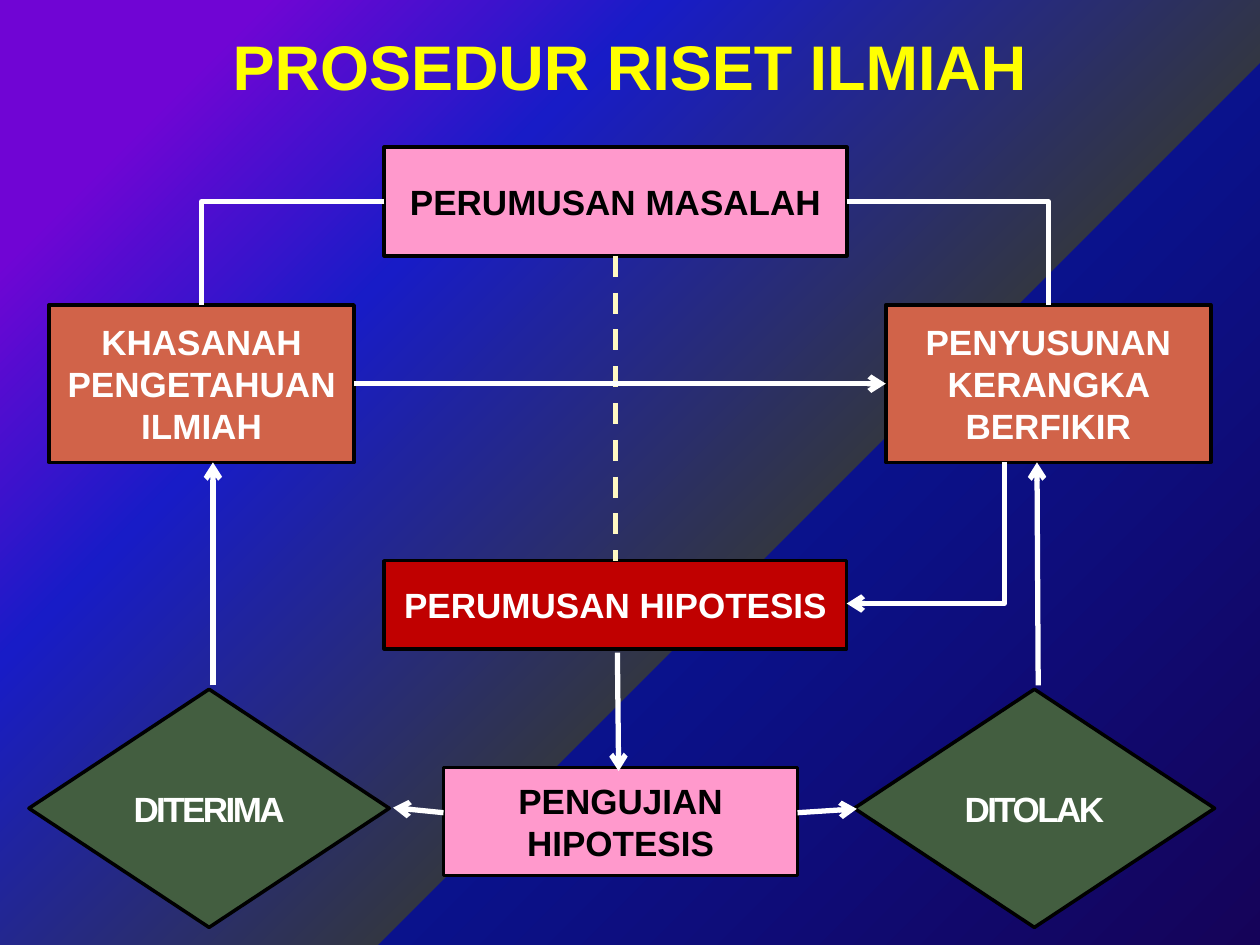
from dataclasses import dataclass

from pptx import Presentation
from pptx.dml.color import RGBColor
from pptx.enum.dml import MSO_LINE
from pptx.enum.shapes import MSO_CONNECTOR, MSO_SHAPE
from pptx.enum.text import MSO_ANCHOR, PP_ALIGN
from pptx.oxml import parse_xml
from pptx.oxml.ns import nsdecls, qn
from pptx.util import Inches, Pt


@dataclass(frozen=True)
class Theme:
    font: str = "Arial"
    title_size: int = 36
    body_size: int = 20
    title: str = "FFFF00"
    pink: str = "FF99CC"
    red: str = "C00000"
    orange: str = "D16349"
    green: str = "435E40"
    black: str = "000000"
    white: str = "FFFFFF"
    cream: str = "FFF8C2"
    outline: float = 2
    arrow: float = 3
    background: tuple = ((0, "150359"), (40, "0A128C"), (40, "323643"),
                         (70, "181CC7"), (88, "7005D4"))


THEME = Theme()
TOP, LEFT, BOTTOM, RIGHT = range(4)


def rgb(color):
    return RGBColor.from_string(color)


def set_background(s):
    stops = "".join(f'<a:gs pos="{pos * 1000}"><a:srgbClr val="{color}"/></a:gs>'
                    for pos, color in THEME.background)
    bg = parse_xml(
        f'<p:bg {nsdecls("p", "a")}><p:bgPr><a:gradFill rotWithShape="1">'
        f'<a:gsLst>{stops}</a:gsLst><a:path path="circle">'
        '<a:fillToRect l="100000" t="100000"/></a:path></a:gradFill>'
        '<a:effectLst/></p:bgPr></p:bg>')
    s.element.cSld.insert(0, bg)


def write(tf, text, size, color, spacing=0):
    tf.vertical_anchor = MSO_ANCHOR.MIDDLE
    p = tf.paragraphs[0]
    p.alignment = PP_ALIGN.CENTER
    r = p.add_run()
    r.text = text
    r.font.name = THEME.font
    r.font.size = Pt(size)
    r.font.bold = True
    r.font.color.rgb = rgb(color)
    if spacing:
        r.font._element.set("spc", str(int(spacing * 100)))


def add_title(s, box, text):
    title = s.shapes.title
    title.left, title.top, title.width, title.height = map(Inches, box)
    title.text_frame.word_wrap = True
    write(title.text_frame, text, THEME.title_size, THEME.title)


def add_node(s, box, text, fill, color=THEME.white, kind=MSO_SHAPE.RECTANGLE,
             outline=THEME.outline):
    sp = s.shapes.add_shape(kind, *map(Inches, box))
    sp.shadow.inherit = False
    sp.fill.solid()
    sp.fill.fore_color.rgb = rgb(fill)
    sp.line.color.rgb = rgb(THEME.black)
    sp.line.width = Pt(outline)
    is_decision = kind == MSO_SHAPE.DIAMOND
    sp.text_frame.word_wrap = not is_decision
    write(sp.text_frame, text, THEME.body_size, color, -1.5 if is_decision else 0)
    return sp


def add_link(s, start, end, color=THEME.white, elbow=False, dash=False, arrow=None):
    """Join two ends, each an (x, y) point or a (shape, side) pair.

    An elbow runs sideways first, then vertically; arrow is "headEnd" (at
    start) or "tailEnd" (at end).
    """
    def point(place):
        where, side = place
        if not hasattr(where, "shape_id"):
            return Inches(where), Inches(side)
        dx, dy = ((1, 0), (0, 1), (1, 2), (2, 1))[side]
        return where.left + where.width * dx // 2, where.top + where.height * dy // 2

    kind = MSO_CONNECTOR.ELBOW if elbow else MSO_CONNECTOR.STRAIGHT
    c = s.shapes.add_connector(kind, *point(start), *point(end))
    for place, connect in ((start, c.begin_connect), (end, c.end_connect)):
        if hasattr(place[0], "shape_id"):
            connect(*place)
    c.line.color.rgb = rgb(color)
    c.line.width = Pt(THEME.arrow)
    if dash:
        c.line.dash_style = MSO_LINE.DASH
    spPr = c._element.spPr
    if elbow:
        spPr.find(qn("a:prstGeom")).set("prst", "bentConnector2")
    if arrow:
        c.line._get_or_add_ln().append(
            parse_xml(f'<a:{arrow} {nsdecls("a")} type="arrow"/>'))
    spPr.append(parse_xml(f'<a:effectLst {nsdecls("a")}/>'))


def add_flowchart(s, box):
    x, y, w, h = box
    mid_x, mid_w = x + 2.82, 3.67
    side_y, side_h = y + 1.25, 1.25
    side_bottom = side_y + side_h
    hypothesis_y, test_y, decision_y = y + 3.28, y + 4.92, y + 4.3
    test_x, test_w = x + 3.29, 2.81
    decision_w, decision_h = 2.86, h - 4.3

    problem = add_node(s, (mid_x, y, mid_w, 0.86), "PERUMUSAN MASALAH",
                       THEME.pink, THEME.black, outline=2.25)
    hypothesis = add_node(s, (mid_x, hypothesis_y, mid_w, 0.7),
                          "PERUMUSAN HIPOTESIS", THEME.red)
    framework = add_node(s, (x + 6.8, side_y, 2.58, side_h),
                         "PENYUSUNAN KERANGKA BERFIKIR", THEME.orange)
    knowledge = add_node(s, (x + 0.16, side_y, 2.42, side_h),
                         "KHASANAH PENGETAHUAN ILMIAH", THEME.orange)
    add_node(s, (test_x, test_y, test_w, 0.86), "PENGUJIAN HIPOTESIS",
             THEME.pink, THEME.black)
    for left, text in ((x + w - decision_w, "DITOLAK"), (x, "DITERIMA")):
        add_node(s, (left, decision_y, decision_w, decision_h), text,
                 THEME.green, kind=MSO_SHAPE.DIAMOND)

    add_link(s, (problem, BOTTOM), (hypothesis, TOP), THEME.cream, dash=True)
    add_link(s, (problem, LEFT), (knowledge, TOP), elbow=True)
    add_link(s, (problem, RIGHT), (framework, TOP), elbow=True)
    add_link(s, (knowledge, RIGHT), (framework, LEFT), arrow="tailEnd")
    arrows = (
        ((x + 4.67, hypothesis_y + 0.73), (x + 4.68, test_y + 0.03)),
        ((test_x + test_w, test_y + 0.36), (x + 6.57, test_y + 0.33)),
        ((test_x, test_y + 0.36), (x + 2.89, test_y + 0.32)),
        ((x + 8.01, decision_y - 0.03), (x + 8, side_bottom)),
        ((x + 1.46, decision_y - 0.03), (x + 1.46, side_bottom)),
    )
    for start, end in arrows:
        add_link(s, start, end, arrow="tailEnd")
    add_link(s, (mid_x + mid_w, hypothesis_y + 0.34), (x + 7.74, side_bottom),
             elbow=True, arrow="headEnd")


def main():
    prs = Presentation()
    prs.slide_width, prs.slide_height = Inches(10), Inches(7.5)
    s = prs.slides.add_slide(prs.slide_layouts[5])
    set_background(s)
    add_title(s, (0.5, 0.13, 9, 0.78), "PROSEDUR RISET ILMIAH")
    add_flowchart(s, (0.23, 1.17, 9.41, 6.19))
    prs.save("out.pptx")


if __name__ == "__main__":
    main()
